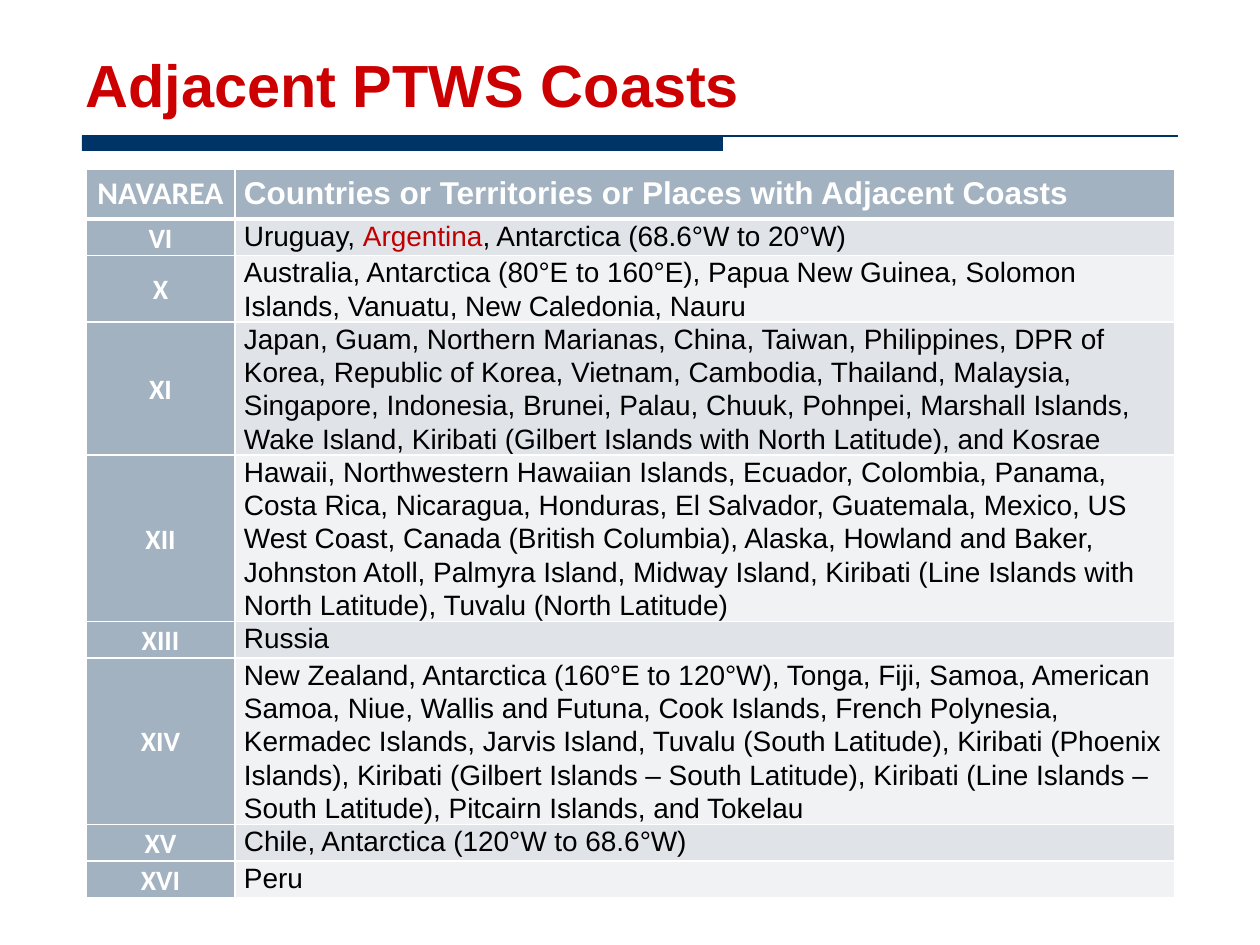
"""Build the slide listing adjacent PTWS coasts by NAVAREA."""
from dataclasses import dataclass

from lxml.etree import SubElement
from pptx import Presentation
from pptx.dml.color import RGBColor
from pptx.enum.shapes import MSO_CONNECTOR as Connector, MSO_SHAPE as Shape
from pptx.enum.text import MSO_ANCHOR as Anchor, MSO_AUTO_SIZE as AutoSize, PP_ALIGN as Align
from pptx.oxml.ns import qn
from pptx.util import Emu, Pt

TITLE = "Adjacent PTWS Coasts"
HEADER = ("NAVAREA", "Countries or Territories or Places with Adjacent Coasts")
AREAS = [
    ("VI", 1, ["Uruguay, ", "Argentina", ", Antarctica (68.6°W to 20°W)"]),
    ("X", 2, ["Australia, Antarctica (80°E to 160°E), Papua New Guinea, Solomon Islands, "
              "Vanuatu, New Caledonia, Nauru"]),
    ("XI", 4, ["Japan, Guam, Northern Marianas, China, Taiwan, Philippines, DPR of Korea, "
               "Republic of Korea, Vietnam, Cambodia, Thailand, Malaysia, Singapore, "
               "Indonesia, Brunei, Palau, Chuuk, Pohnpei, Marshall Islands, Wake Island, "
               "Kiribati (Gilbert Islands with North Latitude), and Kosrae"]),
    ("XII", 5, ["Hawaii, Northwestern Hawaiian Islands, Ecuador, Colombia, Panama, "
                "Costa Rica, Nicaragua, Honduras, El Salvador, Guatemala, Mexico, "
                "US West Coast, Canada (British Columbia), Alaska, Howland and Baker, "
                "Johnston Atoll, Palmyra Island, Midway Island, Kiribati (Line Islands "
                "with North Latitude), Tuvalu (North Latitude)"]),
    ("XIII", 1, ["Russia"]),
    ("XIV", 5, ["New Zealand, Antarctica (160°E to 120°W), Tonga, Fiji, Samoa, American "
                "Samoa, Niue, Wallis and Futuna, Cook Islands, French Polynesia, Kermadec "
                "Islands, Jarvis Island, Tuvalu (South Latitude), Kiribati (Phoenix "
                "Islands), Kiribati (Gilbert Islands – South Latitude), Kiribati (Line "
                "Islands – South Latitude), Pitcairn Islands, and Tokelau"]),
    ("XV", 1, ["Chile, Antarctica (120°W to 68.6°W)"]),
    ("XVI", 1, ["Peru"]),
]
HIGHLIGHTED = "Argentina"
COLUMNS = (149, 940)
HEADER_HEIGHT, LINE_HEIGHT = 50, 33


@dataclass(frozen=True)
class Theme:
    title: str = "CC0000"
    rule: str = "003366"
    head: str = "A3B2C1"
    bands: tuple = ("E0E4E9", "F0F2F4")
    text: str = "000000"
    highlight: str = "C00000"
    white: str = "FFFFFF"
    title_size: int = 34
    head_size: int = 18
    body_size: int = 16
    body_font: str = "Arial"
    area_font: str = "Calibri"


THEME = Theme()


def px(n):
    return Emu(round(n * 914400 / 126))


def add_run(p, text, font, size, color, bold=False):
    r = p.add_run()
    r.text = text
    r.font.name, r.font.size, r.font.bold = font, Pt(size), bold
    r.font.color.rgb = RGBColor.from_string(color)


def add_title(s):
    sp = s.shapes.title
    sp.left, sp.top, sp.width, sp.height = px(73), px(21), px(1101), px(105)
    tf = sp.text_frame
    tf.auto_size, tf.vertical_anchor = AutoSize.NONE, Anchor.BOTTOM
    p = tf.paragraphs[0]
    p.alignment, p.line_spacing = Align.LEFT, 1.1
    add_run(p, TITLE, THEME.body_font, THEME.title_size, THEME.title, True)


def add_rule(s):
    color = RGBColor.from_string(THEME.rule)
    bar = s.shapes.add_shape(Shape.RECTANGLE, px(82), px(136), px(641), px(15))
    bar.shadow.inherit = False
    bar.fill.solid()
    bar.fill.fore_color.rgb = color
    bar.line.fill.background()
    line = s.shapes.add_connector(Connector.STRAIGHT, px(82), px(136), px(1178), px(136))
    line.line.color.rgb, line.line.width = color, Pt(0.75)
    SubElement(line._element.spPr, qn("a:effectLst"))


def style_cell(cell, fill, top, bottom, anchor):
    tc_pr = cell._tc.get_or_add_tcPr()
    for side, width in (("L", 1), ("R", 1), ("T", top), ("B", bottom)):
        ln = SubElement(tc_pr, qn(f"a:ln{side}"), w=str(Pt(width)))
        SubElement(SubElement(ln, qn("a:solidFill")), qn("a:srgbClr"), val=THEME.white)
    cell.fill.solid()
    cell.fill.fore_color.rgb = RGBColor.from_string(fill)
    cell.margin_left = cell.margin_right = px(9)
    cell.margin_top = cell.margin_bottom = 0
    cell.vertical_anchor = anchor
    return cell.text_frame.paragraphs[0]


def add_table(s):
    heights = [HEADER_HEIGHT] + [lines * LINE_HEIGHT for _, lines, _ in AREAS]
    table = s.shapes.add_table(len(heights), len(COLUMNS), px(86), px(169),
                               px(sum(COLUMNS)), px(sum(heights))).table
    for column, width in zip(table.columns, COLUMNS):
        column.width = px(width)
    for row, height in zip(table.rows, heights):
        row.height = px(height)

    fonts = (THEME.area_font, THEME.body_font)
    for col, (text, font, align) in enumerate(zip(HEADER, fonts, (Align.CENTER, Align.LEFT))):
        p = style_cell(table.cell(0, col), THEME.head, 1, 3, Anchor.MIDDLE)
        p.alignment = align
        add_run(p, text, font, THEME.head_size, THEME.white, True)

    for row, (area, _, places) in enumerate(AREAS, 1):
        top = 3 if row == 1 else 1
        p = style_cell(table.cell(row, 0), THEME.head, top, 1, Anchor.MIDDLE)
        p.alignment, p.line_spacing = Align.CENTER, 1.07
        add_run(p, area, THEME.area_font, THEME.body_size, THEME.white, True)
        band = THEME.bands[(row - 1) % 2]
        p = style_cell(table.cell(row, 1), band, top, 1, Anchor.TOP)
        p.line_spacing = 1.07
        for text in places:
            color = THEME.highlight if text == HIGHLIGHTED else THEME.text
            add_run(p, text, THEME.body_font, THEME.body_size, color)


def main():
    prs = Presentation()
    prs.slide_width, prs.slide_height = px(1260), px(945)
    s = prs.slides.add_slide(prs.slide_layouts[5])
    add_rule(s)
    add_title(s)
    add_table(s)
    prs.save("out.pptx")


if __name__ == "__main__":
    main()
